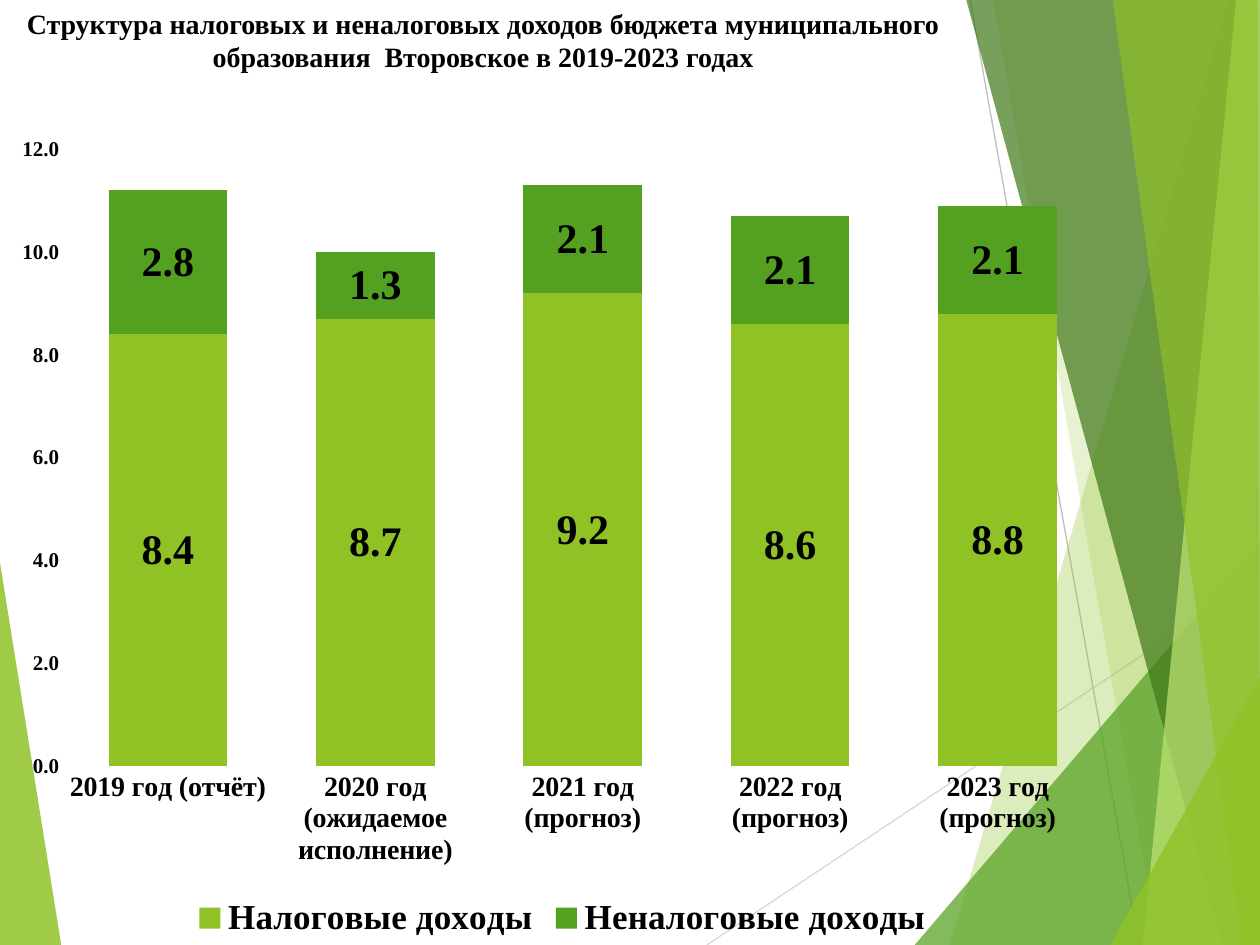
from lxml.etree import SubElement as Sub
from pptx import Presentation
from pptx.chart.data import CategoryChartData as Data
from pptx.dml.color import RGBColor as RGB
from pptx.enum.chart import XL_CHART_TYPE as Kind, XL_LEGEND_POSITION as Spot, XL_TICK_MARK as Tick
from pptx.enum.shapes import MSO_CONNECTOR as Link
from pptx.enum.text import PP_ALIGN as Align
from pptx.oxml.ns import qn
from pptx.util import Cm, Pt

FACE = "Times New Roman"
TITLE = "Структура налоговых и неналоговых доходов бюджета муниципального образования  Второвское в 2019-2023 годах"
YEARS = ["2019 год (отчёт)", "2020 год (ожидаемое исполнение)",
         "2021 год (прогноз)", "2022 год (прогноз)", "2023 год (прогноз)"]
INCOME = [("Налоговые доходы", "90C226", (8.4, 8.7, 9.2, 8.6, 8.8)),
          ("Неналоговые доходы", "54A021", (2.8, 1.3, 2.1, 2.1, 2.1))]
WIDE, HIGH = 25.4, 19.05
EDGE = 25.43
CORNER = ("90C226", 85, [(-0.03, 11.15), (1.24, 19.08), (-0.03, HIGH)])
RAYS = [("D9D9D9", (14.25, HIGH), (EDGE, 11.61)),
        ("BFBFBF", (19.56, 0), (22.96, HIGH))]
SHARDS = [
    ("90C226", 30, [(24.77, 0), (19.15, HIGH), (EDGE, HIGH), (EDGE, 0)]),
    ("90C226", 20, [(20.02, 0), (23.34, HIGH), (EDGE, HIGH), (EDGE, 0)]),
    ("54A021", 72, [(18.44, HIGH), (WIDE, 10.9), (EDGE, HIGH)]),
    ("3F7819", 70, [(19.48, 0), (24.64, HIGH), (EDGE, HIGH), (EDGE, 0)]),
    ("C0E474", 70, [(24.92, 0), (23.04, HIGH), (EDGE, HIGH), (WIDE, 0)]),
    ("90C226", 65, [(22.43, 0), (25.04, HIGH), (WIDE, HIGH), (25.35, 0)]),
    ("90C226", 80, [(22.38, HIGH), (EDGE, 13.59), (EDGE, HIGH)]),
]
PLOT = {"x": 0.057, "y": 0.033, "w": 0.922, "h": 0.75}


def tint(code):
    """Turn a hex string into a colour."""
    return RGB.from_string(code)


def style(font, size, face=FACE, bold=True):
    """Set black type of one size."""
    font.size, font.name, font.bold = Pt(size), face, bold
    font.color.rgb = tint("000000")


def shard(slide, code, alpha, spots):
    """Draw one translucent polygon."""
    spots = [(Cm(x), Cm(y)) for x, y in spots]
    pen = slide.shapes.build_freeform(*spots[0])
    pen.add_line_segments(spots[1:])
    shape = pen.convert_to_shape()
    shape.shadow.inherit = False
    shape.line.fill.background()
    shape.fill.solid()
    shape.fill.fore_color.rgb = tint(code)
    clr = next(shape.element.spPr.iter(qn("a:srgbClr")))
    Sub(clr, qn("a:alpha"), val=str(alpha * 1000))


def ray(slide, code, start, end):
    """Draw one thin line."""
    line = slide.shapes.add_connector(Link.STRAIGHT, *map(Cm, start + end))
    line.line.color.rgb = tint(code)
    line.line.width = Pt(0.75)
    Sub(line.element.spPr, qn("a:effectLst"))


def head(slide):
    """Write the title."""
    box = slide.shapes.add_textbox(0, 0, Cm(19.48), Cm(3))
    frame = box.text_frame
    frame.word_wrap = True
    frame.text = TITLE
    para = frame.paragraphs[0]
    para.alignment = Align.CENTER
    style(para.runs[0].font, 16)


def place(chart):
    """Fix the inner plot area."""
    area = chart.plots[0]._element.getparent()
    old = area.find(qn("c:layout"))
    if old is not None:
        area.remove(old)
    lay = area.makeelement(qn("c:layout"))
    area.insert(0, lay)
    man = Sub(lay, qn("c:manualLayout"))
    Sub(man, qn("c:layoutTarget"), val="inner")
    for key in "xy":
        Sub(man, qn(f"c:{key}Mode"), val="edge")
    for key, val in PLOT.items():
        Sub(man, qn(f"c:{key}"), val=str(val))


def graph(slide):
    """Add the stacked columns."""
    data = Data(number_format="0.0")
    data.categories = YEARS
    for name, _, vals in INCOME:
        data.add_series(name, vals)
    chart = slide.shapes.add_chart(
        Kind.COLUMN_STACKED, 0, Cm(2.46), Cm(22.68), Cm(16.59), data).chart
    style(chart.font, 10, "Lato", False)
    chart.has_title = False
    chart.has_legend = True
    chart.legend.position = Spot.BOTTOM
    chart.legend.include_in_layout = False
    style(chart.legend.font, 20)
    for axis, size in ((chart.category_axis, 16), (chart.value_axis, 12)):
        axis.major_tick_mark = axis.minor_tick_mark = Tick.NONE
        axis.has_major_gridlines = False
        axis.format.line.fill.background()
        style(axis.tick_labels.font, size)
    axis = chart.value_axis
    axis.minimum_scale, axis.maximum_scale, axis.major_unit = 0, 12, 2
    axis.tick_labels.number_format = "0.0"
    axis.tick_labels.number_format_is_linked = False
    plot = chart.plots[0]
    plot.gap_width, plot.overlap = 75, 100
    plot.vary_by_categories = False
    for row, (_, code, _) in zip(plot.series, INCOME):
        row.format.fill.solid()
        row.format.fill.fore_color.rgb = tint(code)
        tags = row.data_labels
        tags.show_value = True
        tags.number_format = "0.0"
        tags.number_format_is_linked = False
        style(tags.font, 24)
    place(chart)


def main():
    """Build the slide and save it."""
    deck = Presentation()
    deck.slide_width, deck.slide_height = Cm(WIDE), Cm(HIGH)
    slide = deck.slides.add_slide(deck.slide_layouts[6])
    shard(slide, *CORNER)
    for item in RAYS:
        ray(slide, *item)
    for item in SHARDS:
        shard(slide, *item)
    head(slide)
    graph(slide)
    deck.save("out.pptx")


if __name__ == "__main__":
    main()
